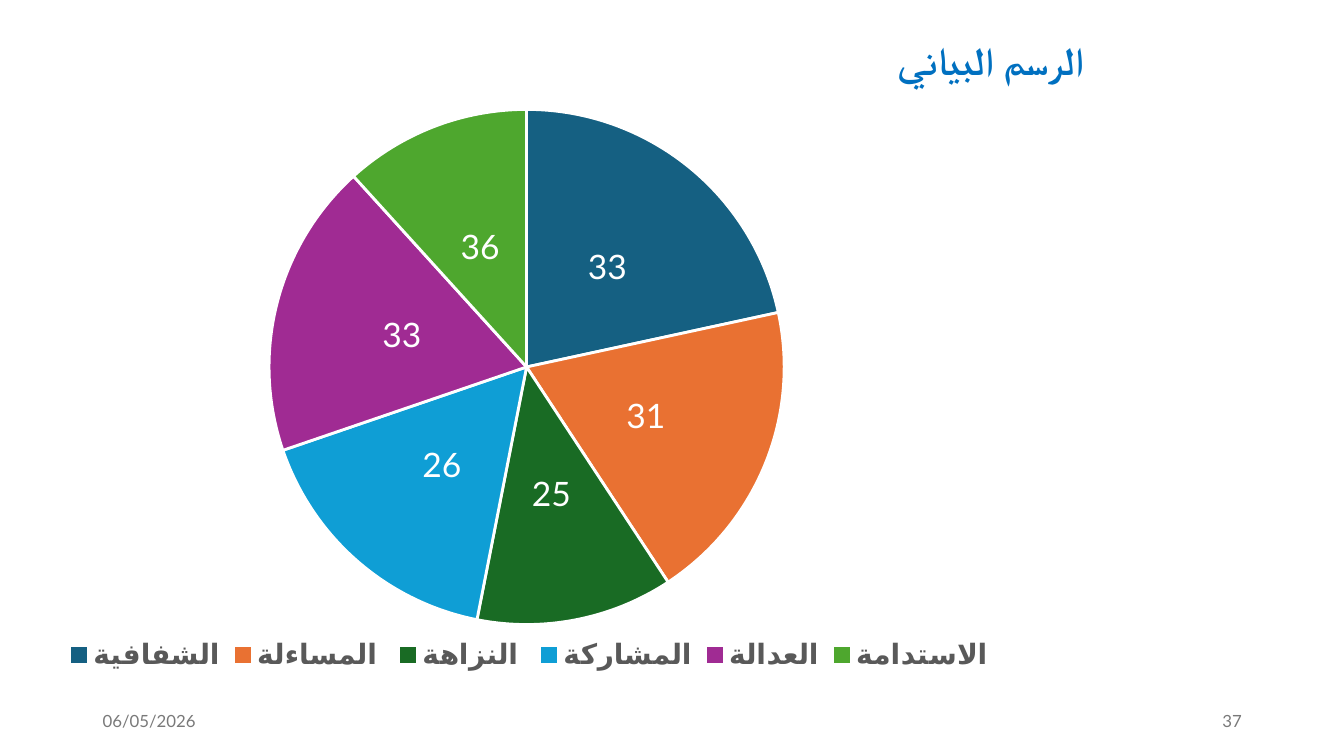
from dataclasses import dataclass

import lxml.etree
import pptx
import pptx.chart.data
import pptx.dml.color
import pptx.enum.chart
import pptx.enum.text
import pptx.oxml.ns
import pptx.util

Pt = pptx.util.Pt
Align = pptx.enum.text.PP_ALIGN
qn = pptx.oxml.ns.qn
FONT = "Lato"
COLORS = {
    "title": "0070C0",
    "legend": "595959",
    "footer": "797979",
    "white": "FFFFFF",
    "black": "000000",
    "blue": "156082",
    "orange": "E97132",
    "dark_green": "196B24",
    "sky": "0F9ED5",
    "purple": "A02B93",
    "green": "4EA72E",
}
CHART_LEFT, CHART_TOP, CHART_WIDTH, CHART_HEIGHT = 30.2, 67.7, 691.9, 422.6


@dataclass(frozen=True)
class Slice:
    category: str
    value: int
    label: str
    color: str


@dataclass(frozen=True)
class Footer:
    text: str
    left: float
    alignment: Align


@dataclass(frozen=True)
class Area:
    """Part of the chart, in points from the slide's corner."""

    left: float
    top: float
    width: float
    height: float


SLICES = [
    Slice("الشفافية", 35, "33", "blue"),
    Slice("المساءلة ", 31, "31", "orange"),
    Slice("النزاهة ", 20, "25", "dark_green"),
    Slice("المشاركة", 27, "26", "sky"),
    Slice("العدالة", 30, "33", "purple"),
    Slice("الاستدامة", 19, "36", "green"),
]
FOOTERS = [
    Footer("06/05/2026", 66.2, Align.LEFT),
    Footer("37", 678.2, Align.RIGHT),
]
PIE_AREA = Area(192.2, 78.2, 368, 368)
LEGEND_AREA = Area(40, 452, 676, 32)


def rgb(name: str) -> pptx.dml.color.RGBColor:
    return pptx.dml.color.RGBColor.from_string(COLORS[name])


def format_font(font, size: float, color: str, bold: bool = False) -> None:
    font.name = FONT
    font.size = Pt(size)
    font.bold = bold
    font.color.rgb = rgb(color)


def set_title(slide) -> None:
    title = slide.shapes.title
    title.left, title.top = Pt(605.5), Pt(10.8)
    title.width, title.height = Pt(197.3), Pt(47.5)
    frame = title.text_frame
    frame.word_wrap = True
    frame.auto_size = pptx.enum.text.MSO_AUTO_SIZE.NONE
    frame.vertical_anchor = pptx.enum.text.MSO_ANCHOR.MIDDLE
    paragraph = frame.paragraphs[0]
    paragraph.alignment = Align.CENTER
    paragraph.line_spacing = 1.5
    paragraph._p.get_or_add_pPr().set("rtl", "1")
    run = paragraph.add_run()
    run.text = "الرسم البياني "
    format_font(run.font, 28, "title", bold=True)
    complex_script = lxml.etree.SubElement(run.font._element, qn("a:cs"))
    complex_script.set("typeface", FONT)


def make_layout(area: Area, inner: bool) -> lxml.etree._Element:
    """Manual chart layout, with lengths as shares of the chart frame."""
    layout = lxml.etree.Element(qn("c:layout"))
    manual = lxml.etree.SubElement(layout, qn("c:manualLayout"))
    settings = {"layoutTarget": "inner"} if inner else {}
    settings |= {
        "xMode": "edge",
        "yMode": "edge",
        "x": f"{(area.left - CHART_LEFT) / CHART_WIDTH:.4f}",
        "y": f"{(area.top - CHART_TOP) / CHART_HEIGHT:.4f}",
        "w": f"{area.width / CHART_WIDTH:.4f}",
        "h": f"{area.height / CHART_HEIGHT:.4f}",
    }
    for name, value in settings.items():
        lxml.etree.SubElement(manual, qn(f"c:{name}")).set("val", value)
    return layout


def place_chart_parts(chart) -> None:
    plot_area = chart._chartSpace.chart.plotArea
    legend = chart.legend._element
    for parent in (plot_area, legend):
        for layout in parent.findall(qn("c:layout")):
            parent.remove(layout)
    plot_area.insert(0, make_layout(PIE_AREA, inner=True))
    legend.find(qn("c:legendPos")).addnext(make_layout(LEGEND_AREA, inner=False))


def add_pie(slide) -> None:
    data = pptx.chart.data.CategoryChartData()
    data.categories = [item.category for item in SLICES]
    data.add_series("Series 1", [item.value for item in SLICES])
    chart = slide.shapes.add_chart(
        pptx.enum.chart.XL_CHART_TYPE.PIE,
        Pt(CHART_LEFT), Pt(CHART_TOP), Pt(CHART_WIDTH), Pt(CHART_HEIGHT), data,
    ).chart
    format_font(chart.font, 10, "black")
    chart.has_title = False
    chart.has_legend = True
    chart.legend.position = pptx.enum.chart.XL_LEGEND_POSITION.BOTTOM
    chart.legend.include_in_layout = False
    format_font(chart.legend.font, 20, "legend", bold=True)
    place_chart_parts(chart)

    plot = chart.plots[0]
    plot.vary_by_categories = True
    center = pptx.enum.chart.XL_LABEL_POSITION.CENTER
    series = plot.series[0]
    series.data_labels.show_value = True
    series.data_labels.position = center
    format_font(series.data_labels.font, 24, "white", bold=True)
    for index, item in enumerate(SLICES):
        point = series.points[index]
        point.format.fill.solid()
        point.format.fill.fore_color.rgb = rgb(item.color)
        point.format.line.color.rgb = rgb("white")
        point.format.line.width = Pt(2)
        run = point.data_label.text_frame.paragraphs[0].add_run()
        run.text = item.label
        format_font(run.font, 24, "white")
        point.data_label.position = center


def add_footer(slide, footer: Footer) -> None:
    box = slide.shapes.add_textbox(Pt(footer.left), Pt(500.4), Pt(216), Pt(28.8))
    frame = box.text_frame
    frame.word_wrap = True
    frame.vertical_anchor = pptx.enum.text.MSO_ANCHOR.MIDDLE
    paragraph = frame.paragraphs[0]
    paragraph.alignment = footer.alignment
    run = paragraph.add_run()
    run.text = footer.text
    format_font(run.font, 12, "footer")


def main() -> None:
    presentation = pptx.Presentation()
    presentation.slide_width, presentation.slide_height = Pt(960), Pt(540)
    slide = presentation.slides.add_slide(presentation.slide_layouts[5])
    set_title(slide)
    add_pie(slide)
    for footer in FOOTERS:
        add_footer(slide, footer)
    presentation.save("out.pptx")


if __name__ == "__main__":
    main()
